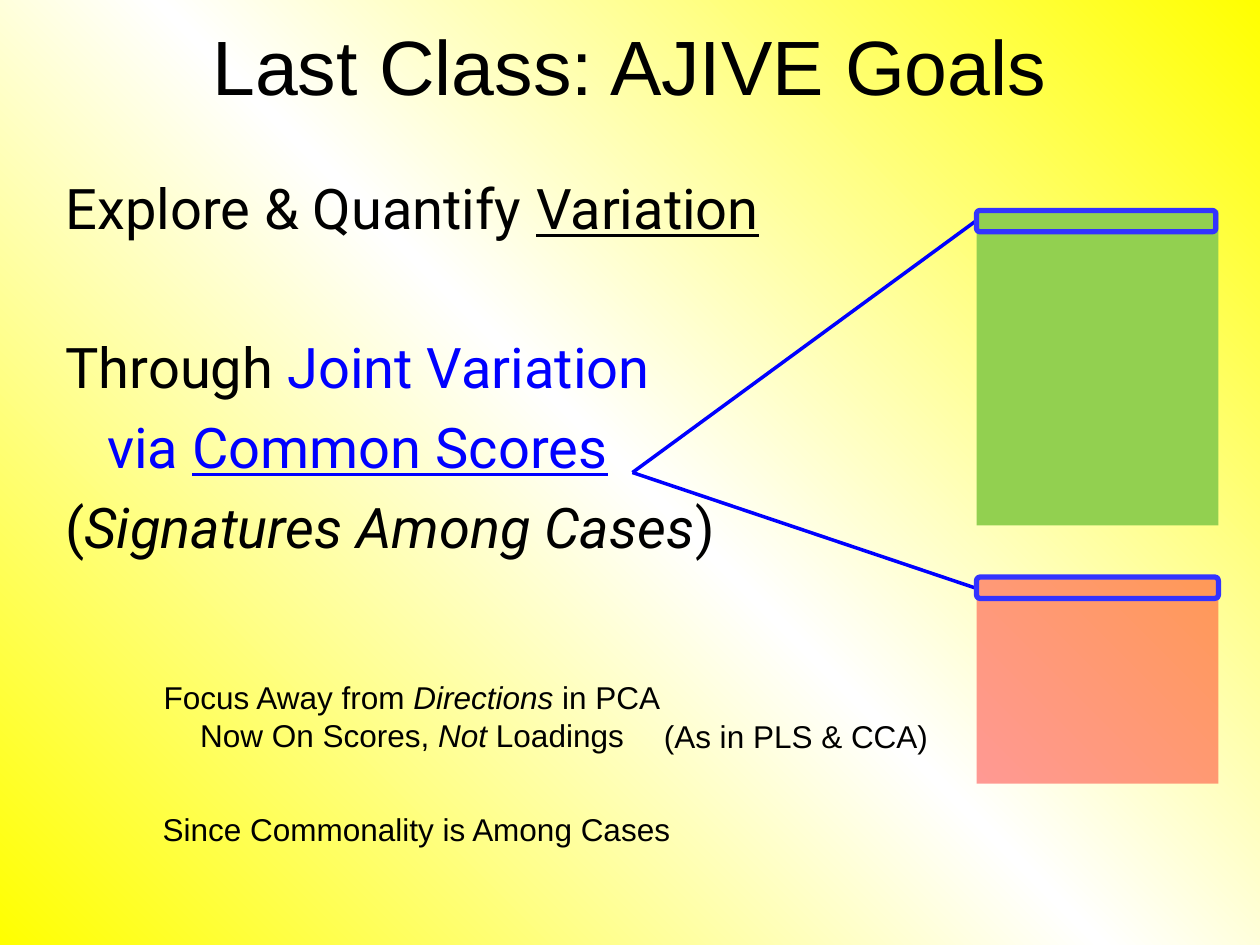
from copy import deepcopy
from lxml.etree import SubElement
from pptx import Presentation
from pptx.dml.color import RGBColor
from pptx.enum.shapes import MSO_CONNECTOR as Connector, MSO_SHAPE as Shape
from pptx.enum.text import MSO_ANCHOR as Anchor, MSO_AUTO_SIZE as AutoSize, PP_ALIGN as Align
from pptx.oxml.ns import qn
from pptx.util import Inches, Pt


def color(value):
    return RGBColor.from_string(value)


def add_text(para, text, size=18, font="Arial", fill="000000", italic=False, underline=False):
    span = para.add_run()
    span.text = text
    span.font.size = Pt(size)
    span.font.name = font
    span.font.color.rgb = color(fill)
    span.font.italic = italic
    span.font.underline = underline


deck = Presentation()
deck.slide_width, deck.slide_height = Inches(10), Inches(7.5)
page = deck.slides.add_slide(deck.slide_layouts[1])

background = page.background.fill
background.gradient()
background.gradient_angle = 225
first_stop = background.gradient_stops[0]
stop_list = page.background._cSld.find(".//" + qn("a:gsLst"))
stop_list.insert(1, deepcopy(stop_list[0]))
for stop, position, value in zip(background.gradient_stops, (0, 0.5, 1), ("FFFF00", "FFFFFF", "FFFF00")):
    stop.position = position
    stop.color.rgb = color(value)

title = page.shapes.title
title.left, title.top, title.width, title.height = Inches(0.5), Inches(0), Inches(9), Inches(1.03)
title.text_frame.vertical_anchor = Anchor.MIDDLE
title.text_frame.auto_size = AutoSize.NONE
title_para = title.text_frame.paragraphs[0]
title_para.alignment = Align.CENTER
add_text(title_para, "Last Class: AJIVE Goals", size=44)

body = page.placeholders[1]
body.left, body.top, body.width, body.height = Inches(0.42), Inches(1.33), Inches(9.33), Inches(5.75)
body.text_frame.auto_size = AutoSize.NONE
blue = "0000FF"
body_lines = [
    (0, 7.4, [("Explore & Quantify ", {}), ("Variation", {"underline": True})]),
    (0, 52.3, [("Through ", {}), ("Joint Variation", {"fill": blue})]),
    (0.33, 7.4, [("via ", {"fill": blue}), ("Common Scores", {"fill": blue, "underline": True})]),
    (0, 7.4, [("(", {}), ("Signatures Among Cases", {"italic": True}), (")", {})]),
]
for index, (indent, space, spans) in enumerate(body_lines):
    para = body.text_frame.paragraphs[0] if index == 0 else body.text_frame.add_paragraph()
    para.space_before = Pt(space)
    properties = para._p.get_or_add_pPr()
    properties.set("marL", str(Inches(indent)))
    properties.set("indent", "0")
    SubElement(properties, qn("a:buNone"))
    for text, style in spans:
        add_text(para, text, size=32, font="Roboto", **style)

for top, height, value, opacity in [(1.67, 2.5, "92D050", 100), (4.58, 1.64, "FF0000", 40)]:
    block = page.shapes.add_shape(Shape.RECTANGLE, Inches(7.75), Inches(top), Inches(1.92), Inches(height))
    block.shadow.inherit = False
    block.fill.solid()
    block.fill.fore_color.rgb = color(value)
    block.line.fill.background()
    if opacity < 100:
        fill_color = block._element.spPr.find(qn("a:solidFill"))[0]
        SubElement(fill_color, qn("a:alpha"), val=str(opacity * 1000))

for start_y in (4.67, 1.75):
    line = page.shapes.add_connector(
        Connector.STRAIGHT, Inches(7.75), Inches(start_y), Inches(5.02), Inches(3.75))
    line.line.color.rgb = color(blue)
    line.line.width = Pt(2)
    SubElement(line._element.spPr, qn("a:effectLst"))

for top, width in [(4.58, 1.92), (1.67, 1.9)]:
    score_row = page.shapes.add_shape(
        Shape.ROUNDED_RECTANGLE, Inches(7.75), Inches(top), Inches(width), Inches(0.17))
    score_row.shadow.inherit = False
    score_row.fill.background()
    score_row.line.color.rgb = color("3333FF")
    score_row.line.width = Pt(3)

notes = [
    (1.18, 5.33, 4.18, 0.71, Align.CENTER, [
        [("Focus Away from ", False), ("Directions", True), (" in PCA", False)],
        [("Now On Scores, ", False), ("Not", True), (" Loadings", False)],
    ]),
    (1.17, 6.38, 4.27, 0.4, Align.CENTER, [[("Since Commonality is Among Cases", False)]]),
    (5.17, 5.64, 2.32, 0.4, Align.LEFT, [[("(As in PLS & CCA)", False)]]),
]
for left, top, width, height, alignment, lines in notes:
    box = page.shapes.add_textbox(Inches(left), Inches(top), Inches(width), Inches(height))
    box.text_frame.word_wrap = False
    box.text_frame.auto_size = AutoSize.SHAPE_TO_FIT_TEXT
    for index, spans in enumerate(lines):
        para = box.text_frame.paragraphs[0] if index == 0 else box.text_frame.add_paragraph()
        para.alignment = alignment
        for text, italic in spans:
            add_text(para, text, italic=italic)

deck.save("out.pptx")
